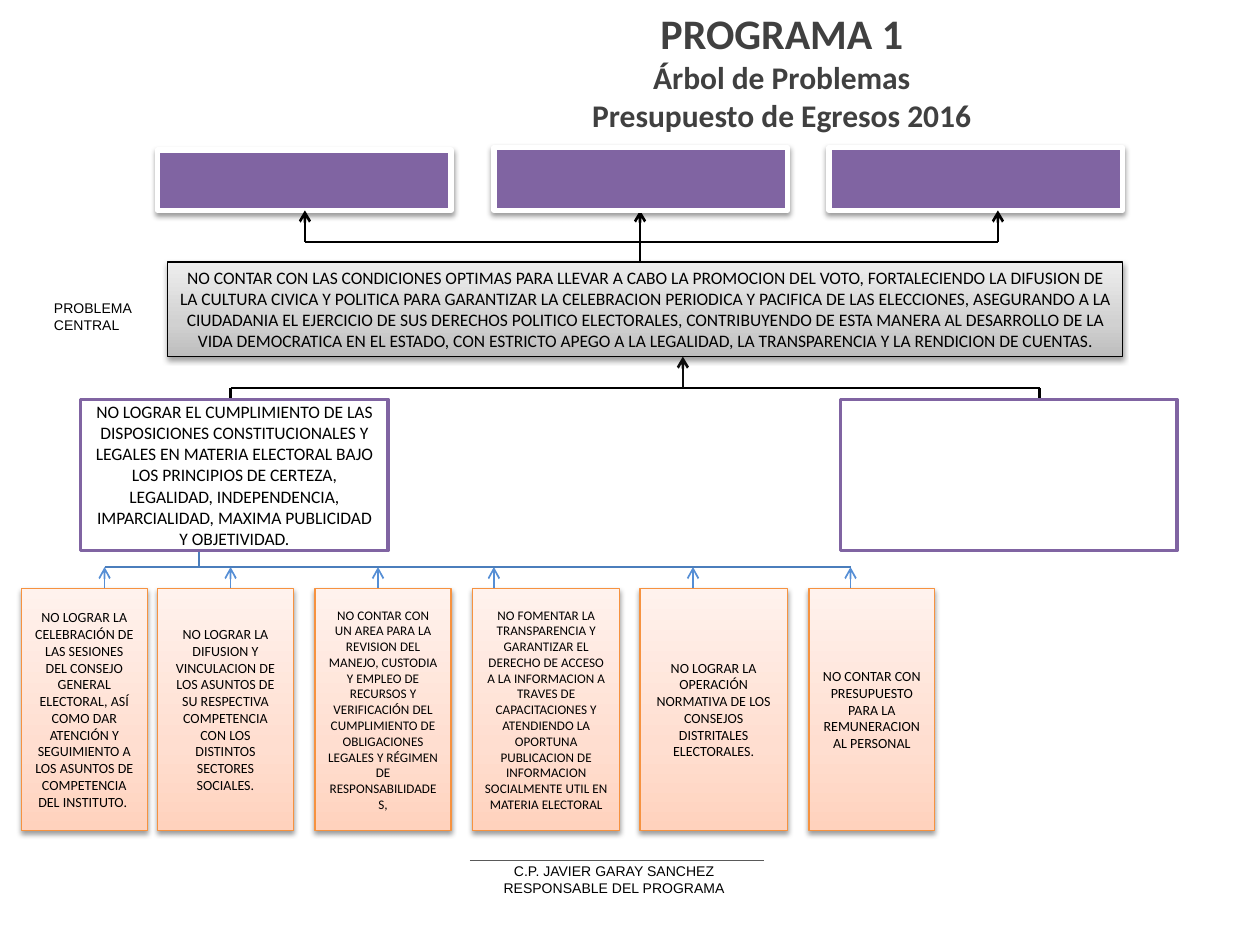
import copy

import pptx
import pptx.dml.color
import pptx.enum.shapes
import pptx.enum.text
import pptx.oxml
import pptx.oxml.ns
import pptx.util
from lxml import etree

Inches = pptx.util.Inches
Pt = pptx.util.Pt
qn = pptx.oxml.ns.qn

BLACK, WHITE, PURPLE, ORANGE = "000000", "FFFFFF", "8064A2", "F69240"
LIGHT_BLUE, BLUE = "558ED5", "4B7EBC"
GREY_FADE = ("BDBDBD", "D1D1D1", "EEEEEE")
PEACH_FADE = ("FFD2BD", "FFDED0", "FFF2ED")

TITLE = [("PROGRAMA 1", 24), ("Árbol de Problemas", 18), ("Presupuesto de Egresos 2016", 18)]
SIGNATURE = [("C.P. JAVIER GARAY SANCHEZ", 8), ("RESPONSABLE DEL PROGRAMA", 8)]
CENTRAL_LABEL = [("PROBLEMA CENTRAL", 8)]

CENTRAL_PROBLEM = (
    "NO CONTAR CON LAS CONDICIONES OPTIMAS PARA LLEVAR A CABO LA PROMOCION DEL VOTO, "
    "FORTALECIENDO LA DIFUSION DE LA CULTURA CIVICA Y POLITICA PARA GARANTIZAR LA CELEBRACION "
    "PERIODICA Y PACIFICA DE LAS ELECCIONES, ASEGURANDO A LA CIUDADANIA EL EJERCICIO DE SUS "
    "DERECHOS POLITICO ELECTORALES, CONTRIBUYENDO DE ESTA MANERA AL DESARROLLO DE LA VIDA "
    "DEMOCRATICA EN EL ESTADO, CON ESTRICTO APEGO A LA LEGALIDAD, LA TRANSPARENCIA Y LA "
    "RENDICION DE CUENTAS."
)
MAIN_CAUSE = (
    "NO LOGRAR EL CUMPLIMIENTO DE LAS DISPOSICIONES CONSTITUCIONALES Y LEGALES EN MATERIA "
    "ELECTORAL BAJO LOS PRINCIPIOS DE CERTEZA, LEGALIDAD, INDEPENDENCIA, IMPARCIALIDAD, "
    "MAXIMA PUBLICIDAD Y OBJETIVIDAD."
)
EFFECTS = [(1.25, 1.19), (3.92, 1.17), (6.58, 1.17)]
MAIN_CAUSES = [(0.64, 2.44, MAIN_CAUSE), (6.67, 2.67, "")]
ROOT_CAUSES = [
    (0.17, 1, 0.83, 8,
     "NO LOGRAR LA CELEBRACIÓN DE LAS SESIONES DEL CONSEJO GENERAL ELECTORAL, ASÍ COMO DAR "
     "ATENCIÓN Y SEGUIMIENTO A LOS ASUNTOS DE COMPETENCIA DEL INSTITUTO. "),
    (1.25, 1.08, 1.83, 8,
     "NO LOGRAR LA DIFUSION Y VINCULACION DE LOS ASUNTOS DE SU RESPECTIVA COMPETENCIA CON LOS "
     "DISTINTOS SECTORES SOCIALES."),
    (2.5, 1.08, 3, 7.5,
     "NO CONTAR CON UN AREA PARA LA REVISION DEL MANEJO, CUSTODIA Y EMPLEO DE RECURSOS Y "
     "VERIFICACIÓN DEL CUMPLIMIENTO DE OBLIGACIONES LEGALES Y RÉGIMEN DE RESPONSABILIDADES,"),
    (3.75, 1.17, 3.92, 7.5,
     "NO FOMENTAR LA TRANSPARENCIA Y GARANTIZAR EL DERECHO DE ACCESO A LA INFORMACION A TRAVES "
     "DE CAPACITACIONES Y ATENDIENDO LA OPORTUNA PUBLICACION DE INFORMACION SOCIALMENTE UTIL "
     "EN MATERIA ELECTORAL"),
    (5.08, 1.17, 5.5, 8,
     "NO LOGRAR LA OPERACIÓN NORMATIVA DE LOS CONSEJOS DISTRITALES ELECTORALES."),
    (6.42, 1, 6.75, 8,
     "NO CONTAR CON PRESUPUESTO PARA LA REMUNERACION AL PERSONAL"),
]

EFFECT_BOTTOM, EFFECT_RAIL = 1.67, 1.92
CENTRAL_TOP, CENTRAL_BOTTOM, CAUSE_RAIL = 2.08, 2.83, 3.08
CAUSE_TOP, ROOT_RAIL, ROOT_TOP = 3.17, 4.5, 4.67

deck = pptx.Presentation()
deck.slide_width, deck.slide_height = Inches(10), Inches(7.5)
slide = deck.slides.add_slide(deck.slide_layouts[6])


def rgb(value):
    return pptx.dml.color.RGBColor.from_string(value)


def add_line(x1, y1, x2, y2, color=BLACK, width=1.5, arrow=False):
    line = slide.shapes.add_connector(
        pptx.enum.shapes.MSO_CONNECTOR.STRAIGHT, Inches(x1), Inches(y1), Inches(x2), Inches(y2))
    line.line.color.rgb = rgb(color)
    line.line.width = Pt(width)
    if arrow:
        etree.SubElement(line.line._get_or_add_ln(), qn("a:tailEnd"), type="arrow")
    etree.SubElement(line._element.spPr, qn("a:effectLst"))


def write(frame, lines, font, color=BLACK, bold=False, centred=True, middle=True):
    frame.word_wrap = True
    anchors = pptx.enum.text.MSO_ANCHOR
    frame.vertical_anchor = anchors.MIDDLE if middle else anchors.TOP
    for index, (text, size) in enumerate(lines):
        paragraph = frame.add_paragraph() if index else frame.paragraphs[0]
        aligns = pptx.enum.text.PP_ALIGN
        paragraph.alignment = aligns.CENTER if centred else aligns.LEFT
        run = paragraph.add_run()
        run.text = text
        run.font.size, run.font.name, run.font.bold = Pt(size), font, bold
        run.font.color.rgb = rgb(color)


def add_text(left, top, width, height, lines, font, **style):
    box = slide.shapes.add_textbox(Inches(left), Inches(top), Inches(width), Inches(height))
    write(box.text_frame, lines, font, **style)


def fade(box, colors):
    box.fill.gradient()
    box.fill.gradient_angle = 90
    stop_list = box._element.spPr.find(".//" + qn("a:gsLst"))
    stop_list.insert(1, copy.deepcopy(stop_list[0]))
    for stop, color, position in zip(box.fill.gradient_stops, colors, (0, 0.35, 1)):
        stop.color.rgb = rgb(color)
        stop.position = position


def cast_shadow(box):
    effects = box._element.spPr.find(qn("a:effectLst"))
    shadow = etree.SubElement(effects, qn("a:outerShdw"), blurRad=str(Pt(3.1)), dist=str(Pt(1.6)),
                              dir="5400000", rotWithShape="0")
    color = etree.SubElement(shadow, qn("a:srgbClr"), val=BLACK)
    etree.SubElement(color, qn("a:alpha"), val="38000")


def add_box(left, top, width, height, fill, outline, weight, text="", size=10, shadow=True):
    box = slide.shapes.add_shape(pptx.enum.shapes.MSO_SHAPE.RECTANGLE, Inches(left), Inches(top),
                                 Inches(width), Inches(height))
    if isinstance(fill, tuple):
        fade(box, fill)
    else:
        box.fill.solid()
        box.fill.fore_color.rgb = rgb(fill)
    box.line.color.rgb = rgb(outline)
    box.line.width = Pt(weight)
    box.shadow.inherit = False
    if shadow:
        cast_shadow(box)
    if text:
        write(box.text_frame, [(text, size)], "Calibri")


add_text(2.58, 0.17, 7.25, 0.78, TITLE, "Calibri", color="404040", bold=True)

for _, _, arrow_x, _, _ in ROOT_CAUSES:
    add_line(arrow_x, 4.75, arrow_x, ROOT_RAIL, LIGHT_BLUE, 1, arrow=True)
add_line(0.83, ROOT_RAIL, 6.75, ROOT_RAIL, BLUE, 0.75)
add_line(1.58, 4.33, 1.58, ROOT_RAIL, BLUE, 0.75)
add_line(5.08, CENTRAL_TOP, 5.08, EFFECT_BOTTOM, arrow=True)
add_line(1.83, CAUSE_RAIL, 8.25, CAUSE_RAIL)
for branch_x in (1.83, 8.25):
    add_line(branch_x, CAUSE_RAIL, branch_x, 3.33)

for left, top in EFFECTS:
    add_box(left, top, 2.33, EFFECT_BOTTOM - top, PURPLE, WHITE, 3)
add_box(1.33, CENTRAL_TOP, 7.58, CENTRAL_BOTTOM - CENTRAL_TOP, GREY_FADE, BLACK, 0.75,
        CENTRAL_PROBLEM)
for left, width, text in MAIN_CAUSES:
    add_box(left, CAUSE_TOP, width, 1.2, WHITE, PURPLE, 2, text, shadow=False)
for left, width, _, size, text in ROOT_CAUSES:
    add_box(left, ROOT_TOP, width, 1.92, PEACH_FADE, ORANGE, 0.75, text, size)

add_line(5.42, CAUSE_RAIL, 5.42, CENTRAL_BOTTOM, "0D0D0D", arrow=True)
add_line(2.42, EFFECT_RAIL, 7.92, EFFECT_RAIL)
for branch_x in (2.42, 7.92):
    add_line(branch_x, EFFECT_RAIL, branch_x, EFFECT_BOTTOM, arrow=True)

add_text(0.33, 2.33, 0.83, 0.37, CENTRAL_LABEL, "Arial", centred=False, middle=False)
add_text(3.5, 6.8, 2.75, 0.37, SIGNATURE, "Arial", middle=False)
add_line(3.73, 6.83, 6.06, 6.83, "595959", 0.75)

deck.save("out.pptx")
